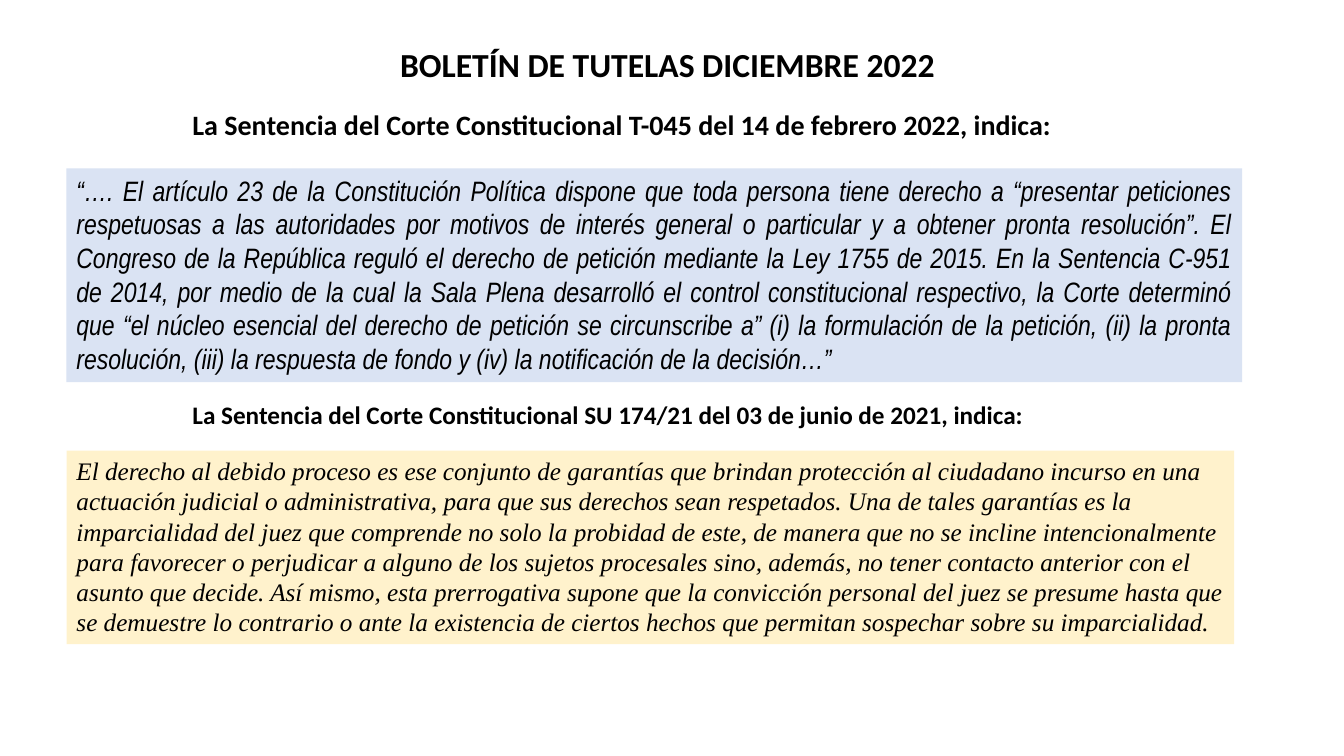
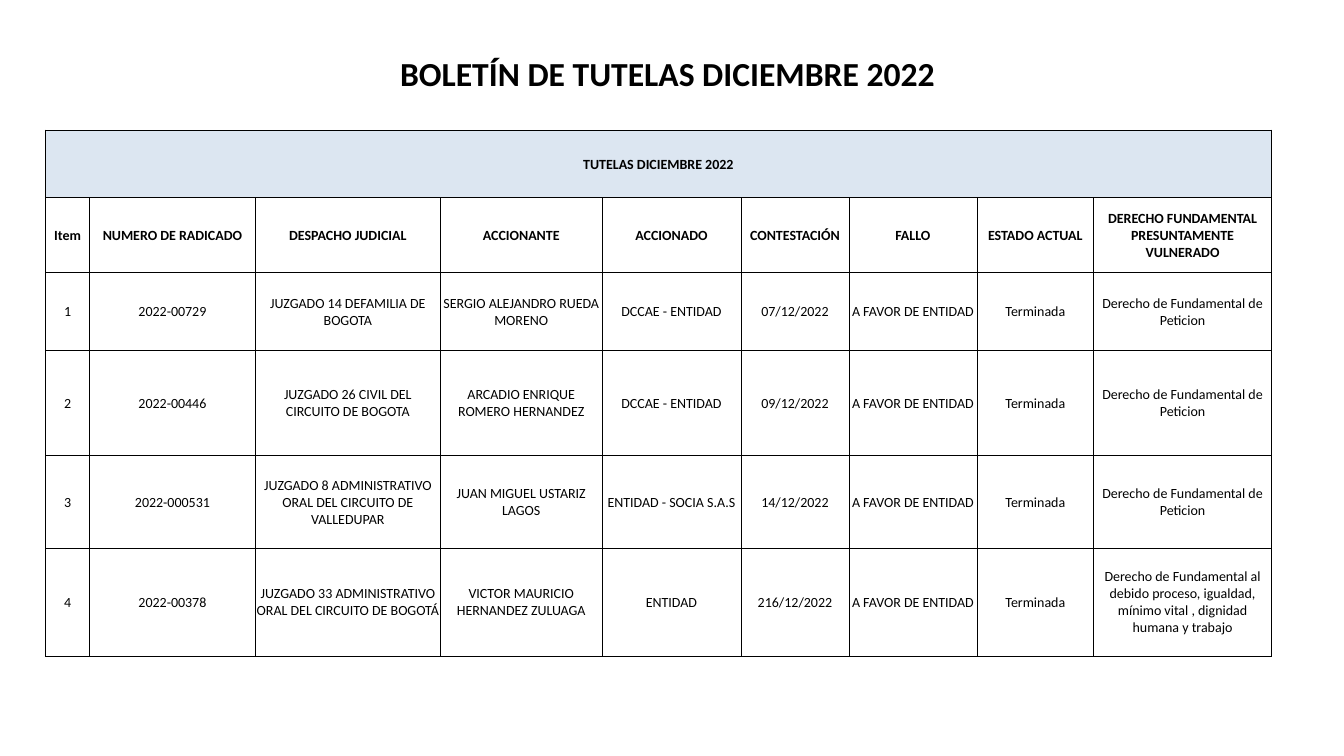
import pptx
import pptx.util
import pptx.dml.color
import pptx.enum.text
import pptx.oxml.ns
import lxml.etree

Inches, Pt = pptx.util.Inches, pptx.util.Pt
ALIGN = pptx.enum.text.PP_ALIGN
ANCHOR = pptx.enum.text.MSO_ANCHOR
FIT = pptx.enum.text.MSO_AUTO_SIZE

# Theme
THEME = {
    "ink": "000000", "paper": "FFFFFF", "blue": "DAE3F3",
    "cream": "FFF2CC", "band": "DCE6F1",
    "sans": "Calibri", "narrow": "Arial Narrow", "serif": "Times New Roman",
    "title": 24, "large": 20, "text": 18, "cell": 10, "rule": 0.5,
}

# Content
TITLE = "BOLETÍN DE TUTELAS DICIEMBRE 2022"

HEADS = [  # top, width, height, size, text
    (1.02, 10.06, 0.44, "large",
     "La Sentencia del Corte Constitucional T-045 del 14 de febrero 2022, indica:"),
    (3.91, 10.38, 0.4, "text",
     "La Sentencia del Corte Constitucional SU 174/21 del 03 de junio de 2021, indica:"),
]

QUOTES = [  # top, width, height, fill, font, size, alignment, text
    (1.67, 11.66, 2.12, "blue", "narrow", "large", ALIGN.JUSTIFY,
     "“…. El artículo 23 de la Constitución Política dispone que toda persona "
     "tiene derecho a “presentar peticiones respetuosas a las autoridades por "
     "motivos de interés general o particular y a obtener pronta resolución”. "
     "El Congreso de la República reguló el derecho de petición mediante la Ley "
     "1755 de 2015. En la Sentencia C-951 de 2014, por medio de la cual la Sala "
     "Plena desarrolló el control constitucional respectivo, la Corte determinó "
     "que “el núcleo esencial del derecho de petición se circunscribe a” (i) la "
     "formulación de la petición, (ii) la pronta resolución, (iii) la respuesta "
     "de fondo y (iv) la notificación de la decisión…”"),
    (4.47, 11.58, 1.92, "cream", "serif", "text", ALIGN.LEFT,
     "El derecho al debido proceso es ese conjunto de garantías que brindan "
     "protección al ciudadano incurso en una actuación judicial o "
     "administrativa, para que sus derechos sean respetados. Una de tales "
     "garantías es la imparcialidad del juez que comprende no solo la probidad "
     "de este, de manera que no se incline intencionalmente para favorecer o "
     "perjudicar a alguno de los sujetos procesales sino, además, no tener "
     "contacto anterior con el asunto que decide. Así mismo, esta prerrogativa "
     "supone que la convicción personal del juez se presume hasta que se "
     "demuestre lo contrario o ante la existencia de ciertos hechos que "
     "permitan sospechar sobre su imparcialidad."),
]

BANNER = "TUTELAS DICIEMBRE 2022"
COLS = [
    ("Item", 0.44), ("NUMERO DE RADICADO", 1.64), ("DESPACHO JUDICIAL", 1.84),
    ("ACCIONANTE", 1.6), ("ACCIONADO", 1.38), ("CONTESTACIÓN", 1.07),
    ("FALLO", 1.27), ("ESTADO ACTUAL", 1.16),
    ("DERECHO FUNDAMENTAL PRESUNTAMENTE VULNERADO", 1.76),
]
ROWS = [0.67, 0.74, 0.78, 1.04, 0.92, 1.07]
RULING, STATE = "A FAVOR DE ENTIDAD", "Terminada"
PLEA = "Derecho de Fundamental de Peticion"
CASES = [  # number, court, claimant, defendant, reply date, right
    ("2022-00729", "JUZGADO 14 DEFAMILIA DE BOGOTA",
     "SERGIO ALEJANDRO RUEDA MORENO", "DCCAE - ENTIDAD", "07/12/2022", PLEA),
    ("2022-00446", "JUZGADO 26 CIVIL DEL CIRCUITO DE BOGOTA",
     "ARCADIO ENRIQUE ROMERO HERNANDEZ", "DCCAE - ENTIDAD", "09/12/2022", PLEA),
    ("2022-000531", "JUZGADO 8 ADMINISTRATIVO ORAL DEL CIRCUITO DE VALLEDUPAR",
     "JUAN MIGUEL USTARIZ LAGOS", "ENTIDAD - SOCIA S.A.S", "14/12/2022", PLEA),
    ("2022-00378", "JUZGADO 33 ADMINISTRATIVO ORAL DEL CIRCUITO DE BOGOTÁ",
     "VICTOR MAURICIO HERNANDEZ ZULUAGA", "ENTIDAD", "216/12/2022",
     "Derecho de Fundamental al debido proceso, igualdad, mínimo vital , "
     "dignidad humana y trabajo"),
]


# Helpers
def color(key):
    return pptx.dml.color.RGBColor.from_string(THEME[key])


def paint(part, key):
    part.fill.solid()
    part.fill.fore_color.rgb = color(key)


def write(frame, text, size, face="sans", bold=False, italic=False,
          align=ALIGN.LEFT):
    frame.text = text
    para = frame.paragraphs[0]
    para.alignment = align
    font = para.runs[0].font
    font.name, font.size = THEME[face], Pt(THEME[size])
    font.bold, font.italic = bold, italic
    font.color.rgb = color("ink")


def add_text(slide, left, top, width, height, text, size, fill=None,
             wrap=True, **style):
    box = slide.shapes.add_textbox(*map(Inches, (left, top, width, height)))
    if fill:
        paint(box, fill)
    frame = box.text_frame
    frame.word_wrap = wrap
    frame.auto_size = FIT.SHAPE_TO_FIT_TEXT
    write(frame, text, size, **style)


def add_page(deck, top):
    slide = deck.slides.add_slide(deck.slide_layouts[6])
    add_text(slide, 3.87, top, 5.56, 0.5, TITLE, "title", wrap=False, bold=True)
    return slide


def add_rules(cell):
    props = cell._tc.get_or_add_tcPr()
    for side in ("a:lnL", "a:lnR", "a:lnT", "a:lnB"):
        line = lxml.etree.SubElement(props, pptx.oxml.ns.qn(side),
                                     w=str(Pt(THEME["rule"])))
        fill = lxml.etree.SubElement(line, pptx.oxml.ns.qn("a:solidFill"))
        lxml.etree.SubElement(fill, pptx.oxml.ns.qn("a:srgbClr"),
                              val=THEME["ink"])


def set_cell(cell, text, bold, fill):
    add_rules(cell)
    paint(cell, fill)
    cell.vertical_anchor = ANCHOR.MIDDLE
    cell.margin_left = cell.margin_right = cell.margin_top = Inches(0.01)
    cell.margin_bottom = 0
    if text:
        write(cell.text_frame, text, "cell", bold=bold, align=ALIGN.CENTER)


# Slides
def add_rulings(deck):
    slide = add_page(deck, 0.39)
    for top, width, height, size, text in HEADS:
        add_text(slide, 1.81, top, width, height, text, size, bold=True)
    for top, width, height, fill, face, size, align, text in QUOTES:
        add_text(slide, 0.66, top, width, height, text, size, fill=fill,
                 face=face, italic=True, align=align)


def add_cases(deck):
    slide = add_page(deck, 0.48)
    names, widths = zip(*COLS)
    grid = [[BANNER] + [""] * (len(COLS) - 1), names]
    for item, (*facts, plea) in enumerate(CASES, 1):
        grid.append([str(item), *facts, RULING, STATE, plea])

    table = slide.shapes.add_table(
        len(ROWS), len(COLS), Inches(0.45), Inches(1.29),
        Inches(sum(widths)), Inches(sum(ROWS))).table
    table.first_row = table.horz_banding = False
    for col, width in zip(table.columns, widths):
        col.width = Inches(width)
    for row, height in zip(table.rows, ROWS):
        row.height = Inches(height)
    for y, texts in enumerate(grid):
        for x, text in enumerate(texts):
            set_cell(table.cell(y, x), text, y < 2, "paper" if y else "band")
    table.cell(0, 0).merge(table.cell(0, len(COLS) - 1))


def main():
    deck = pptx.Presentation()
    deck.slide_width, deck.slide_height = Inches(13.33), Inches(7.5)
    add_rulings(deck)
    add_cases(deck)
    deck.save("out.pptx")


if __name__ == "__main__":
    main()
